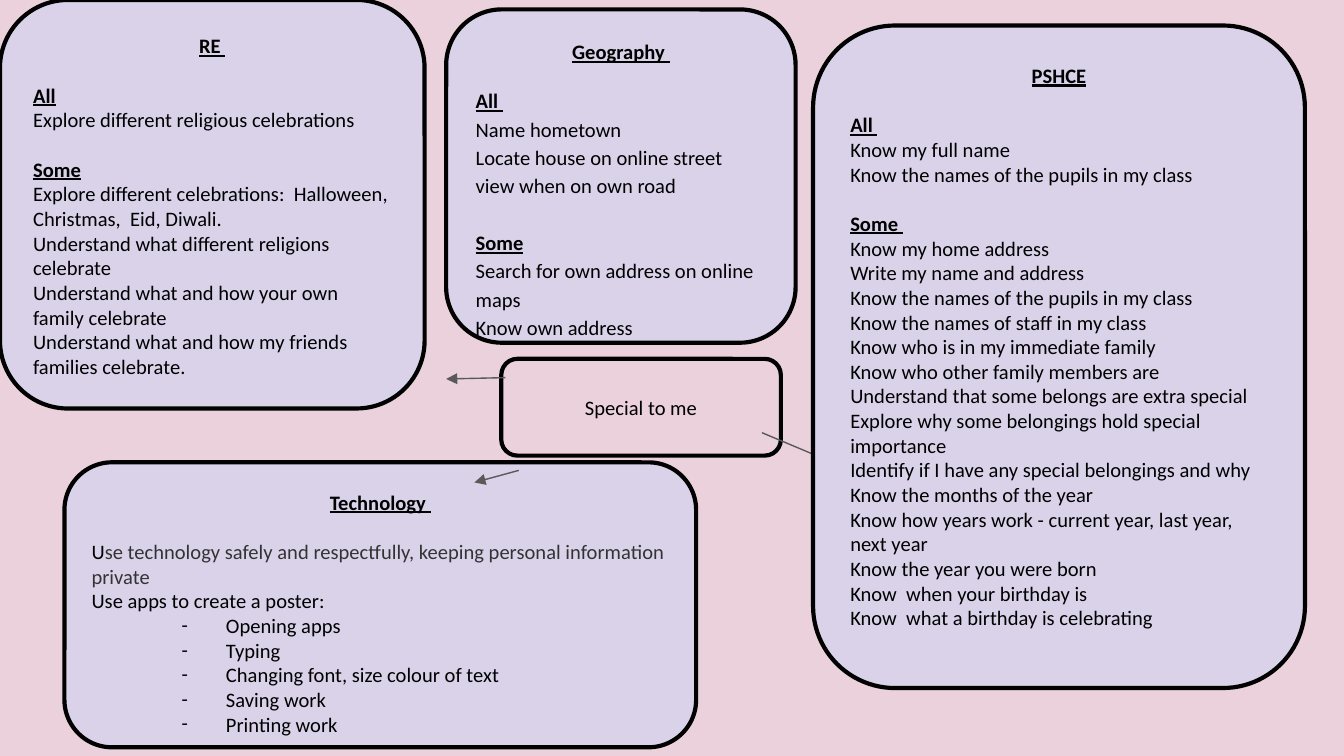
from lxml import etree
from pptx import Presentation
from pptx.dml.color import RGBColor
from pptx.enum import shapes, text
from pptx.oxml import ns
from pptx.util import Inches, Pt

PINK = RGBColor(0xEA, 0xD1, 0xDC)
LILAC = RGBColor(0xD9, 0xD2, 0xE9)
BLACK = RGBColor(0, 0, 0)
DARK = RGBColor(0x33, 0x33, 0x33)
GREY = RGBColor(0x59, 0x59, 0x59)
FONT = "Calibri"
SIZE = 11
LINE_HEIGHT = 1.2 * SIZE

TOPIC = {"at": (3.73, 2.67, 2.08, 0.72), "label": "Special to me"}
TECHNOLOGY = {
    "at": (0.48, 3.44, 4.7, 2.12),
    "title": "Technology ",
    "sections": [("", [
        [("U", BLACK), ("se technology safely and respectfully, keeping personal information private", DARK)],
        "Use apps to create a poster:",
    ])],
    "bullets": ["Opening apps", "Typing", "Changing font, size colour of text",
                "Saving work", "Printing work"],
}
PSHCE = {
    "at": (6.05, 0.19, 3.66, 4.93),
    "title": "PSHCE",
    "sections": [
        ("All ", ["Know my full name", "Know the names of the pupils in my class"]),
        ("Some ", [
            "Know my home address",
            "Write my name and address",
            "Know the names of the pupils in my class",
            "Know the names of staff in my class",
            "Know who is in my immediate family",
            "Know who other family members are",
            "Understand that some belongs are extra special",
            "Explore why some belongings hold special importance",
            "Identify if I have any special belongings and why",
            "Know the months of the year",
            "Know how years work - current year, last year, next year",
            "Know the year you were born",
            "Know  when your birthday is",
            "Know  what a birthday is celebrating",
        ]),
    ],
}
RE = {
    "at": (0, 0, 3.16, 3.04),
    "title": "RE ",
    "sections": [
        ("All", ["Explore different religious celebrations"]),
        ("Some", [
            "Explore different celebrations:  Halloween, Christmas,  Eid, Diwali.",
            "Understand what different religions celebrate",
            "Understand what and how your own family celebrate",
            "Understand what and how my friends families celebrate.",
        ]),
    ],
}
GEOGRAPHY = {
    "at": (3.32, 0.07, 2.6, 2.48),
    "title": "Geography ",
    "spacing": 1.15,
    "sections": [
        ("All ", ["Name hometown", "Locate house on online street view when on own road"]),
        ("Some", ["Search for own address on online maps", "Know own address"]),
    ],
}
ARROW_TO_PSHCE = (5.67, 3.22, 7.24, 3.88)
ARROW_TO_TECHNOLOGY = (3.86, 3.5, 3.53, 3.59)
ARROW_TO_RE = (3.76, 2.81, 3.32, 2.82)


def add_box(s, at, fill, anchor):
    sp = s.shapes.add_shape(shapes.MSO_SHAPE.ROUNDED_RECTANGLE, *map(Inches, at))
    sp.shadow.inherit = False
    sp.fill.solid()
    sp.fill.fore_color.rgb = fill
    sp.line.color.rgb = BLACK
    sp.line.width = Pt(2.25)
    tf = sp.text_frame
    tf.word_wrap = True
    tf.vertical_anchor = anchor
    tf.margin_left = tf.margin_right = tf.margin_top = tf.margin_bottom = Inches(0.1)
    return tf


def write(tf, content, heading=False, centred=False, bullet=False, gap=0, spacing=None):
    p = tf.paragraphs[0]
    if p.runs:
        p = tf.add_paragraph()
    p.alignment = text.PP_ALIGN.CENTER if centred else text.PP_ALIGN.LEFT
    if gap:
        p.space_before = Pt(gap)
    if spacing:
        p.line_spacing = spacing
    if bullet:
        pPr = p._p.get_or_add_pPr()
        pPr.set("marL", str(Inches(1)))
        pPr.set("indent", str(Inches(-0.33)))
        etree.SubElement(pPr, ns.qn("a:buFont")).set("typeface", FONT)
        etree.SubElement(pPr, ns.qn("a:buChar")).set("char", "-")
    parts = [(content, BLACK)] if isinstance(content, str) else content
    for words, color in parts:
        r = p.add_run()
        r.text = words
        r.font.name = FONT
        r.font.size = Pt(SIZE)
        r.font.bold = r.font.underline = heading
        r.font.color.rgb = color


def add_subject(s, subject):
    tf = add_box(s, subject["at"], LILAC, text.MSO_ANCHOR.TOP)
    spacing = subject.get("spacing", 1)
    write(tf, subject["title"], heading=True, centred=True)
    for i, (heading, items) in enumerate(subject["sections"]):
        heading_spacing = spacing if i else 1
        gap = round(LINE_HEIGHT * heading_spacing, 1)
        if heading:
            write(tf, heading, heading=True, gap=gap, spacing=heading_spacing)
            gap = 0
        for item in items:
            write(tf, item, gap=gap, spacing=spacing)
            gap = 0
    for item in subject.get("bullets", []):
        write(tf, item, bullet=True)


def add_arrow(s, ends):
    c = s.shapes.add_connector(shapes.MSO_CONNECTOR.STRAIGHT, *map(Inches, ends))
    c.line.color.rgb = GREY
    c.line.width = Pt(0.75)
    spPr = c._element.spPr
    etree.SubElement(spPr.find(ns.qn("a:ln")), ns.qn("a:tailEnd")).set("type", "triangle")
    etree.SubElement(spPr, ns.qn("a:effectLst"))


def main():
    prs = Presentation()
    prs.slide_width = Inches(10)
    prs.slide_height = prs.slide_width * 9 // 16
    s = prs.slides.add_slide(prs.slide_layouts[6])
    s.background.fill.solid()
    s.background.fill.fore_color.rgb = PINK

    tf = add_box(s, TOPIC["at"], PINK, text.MSO_ANCHOR.MIDDLE)
    write(tf, TOPIC["label"], centred=True)
    add_subject(s, TECHNOLOGY)
    add_arrow(s, ARROW_TO_PSHCE)
    add_arrow(s, ARROW_TO_TECHNOLOGY)
    for subject in (PSHCE, RE, GEOGRAPHY):
        add_subject(s, subject)
    add_arrow(s, ARROW_TO_RE)
    prs.save("out.pptx")


if __name__ == "__main__":
    main()
